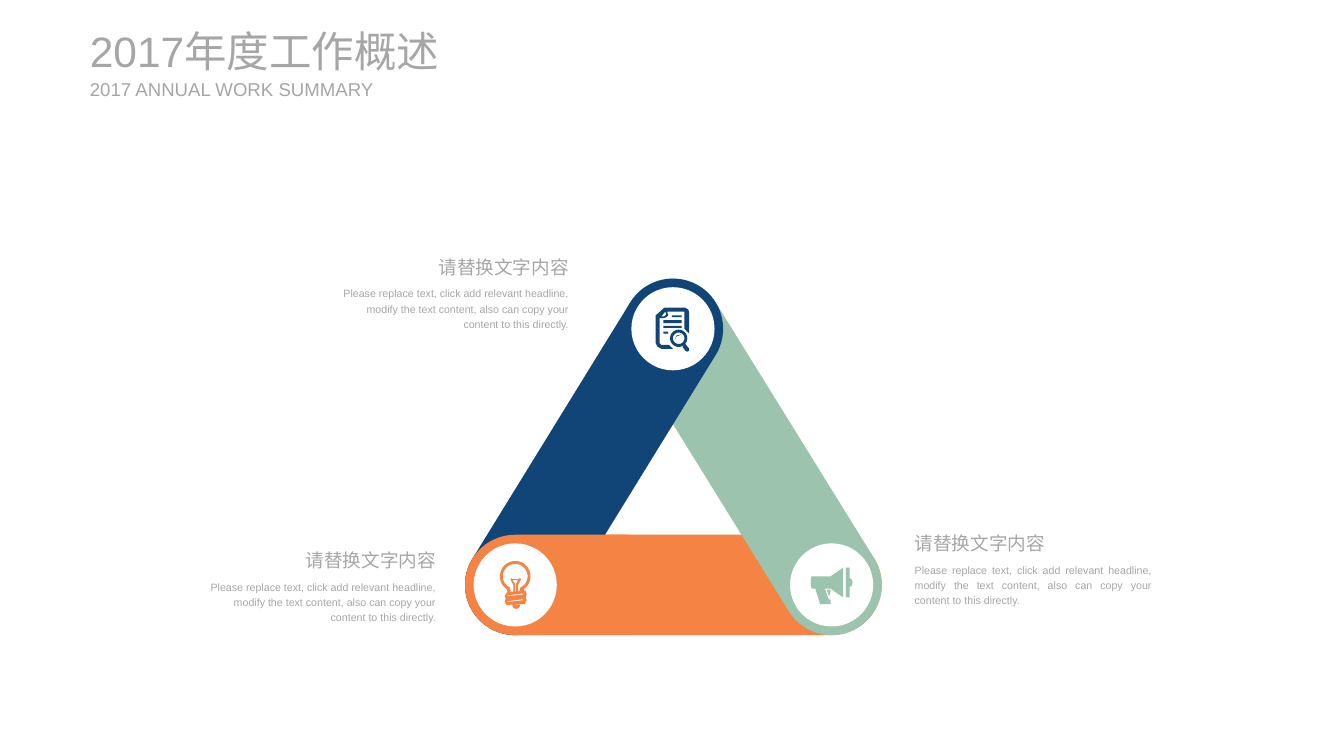
from math import atan2, cos, degrees, dist, radians, sin

from pptx import Presentation
from pptx.dml.color import RGBColor
from pptx.enum import shapes, text
from pptx.util import Inches, Pt

NAVY = RGBColor(0x11, 0x45, 0x77)
ORANGE = RGBColor(0xF5, 0x83, 0x44)
GREEN = RGBColor(0x9C, 0xC3, 0xAE)
WHITE = RGBColor(0xFF, 0xFF, 0xFF)
GREY = RGBColor(0xA6, 0xA6, 0xA6)

LEFT, RIGHT, JUSTIFY = text.PP_ALIGN.LEFT, text.PP_ALIGN.RIGHT, text.PP_ALIGN.JUSTIFY
TITLE = "2017年度工作概述"
SUBTITLE = "2017 ANNUAL WORK SUMMARY"
HEADLINE = "请替换文字内容"
BODY = ("Please replace text, click add relevant headline, modify the text content, "
        "also can copy your content to this directly.")
CAPTIONS = [
    (9.47, 5.47, 2.68, LEFT, JUSTIFY),
    (3.46, 2.58, 2.59, RIGHT, RIGHT),
    (2.07, 5.65, 2.59, RIGHT, RIGHT),
]

BAR_HEIGHT = 1.05
DISC_SIZE = 0.87
HEADLINE_HEIGHT = 0.35
APEX, LEFT_CORNER, RIGHT_CORNER = (7.04, 3.44), (5.39, 6.12), (8.7, 6.12)
OVERLAP_END = (6.57, 6.12)
BARS = [
    (LEFT_CORNER, RIGHT_CORNER, ORANGE),
    (APEX, RIGHT_CORNER, GREEN),
    (LEFT_CORNER, APEX, NAVY),
    (LEFT_CORNER, OVERLAP_END, ORANGE),
]


def arc(x, y, radius, start=0, end=360, steps=40):
    """Return points along a circular arc, with angles running clockwise."""
    angles = [radians(start + (end - start) * i / steps) for i in range(steps + 1)]
    return [(x + radius * cos(a), y + radius * sin(a)) for a in angles]


def box(left, top, right, bottom):
    """Return the corners of a rectangle."""
    return [(left, top), (right, top), (right, bottom), (left, bottom)]


DOCUMENT = [
    [(6.95, 3.22), (7.17, 3.22), (7.2, 3.24), (7.21, 3.27), (7.21, 3.49), (7.16, 3.44),
     (7.16, 3.26), (6.98, 3.26), (6.99, 3.3), (6.97, 3.32), (6.94, 3.33), (6.9, 3.33),
     (6.9, 3.59), (6.92, 3.61), (7, 3.61), (7.04, 3.65), (6.92, 3.65), (6.88, 3.63),
     (6.86, 3.59), (6.86, 3.3)],
    [(6.96, 3.26), (6.92, 3.31), (6.95, 3.31), (6.97, 3.29)],
    box(7.03, 3.3, 7.13, 3.32),
    box(6.94, 3.35, 7.13, 3.38),
    box(6.94, 3.41, 7.13, 3.43),
    box(6.94, 3.47, 6.99, 3.49),
    arc(7.1, 3.54, 0.09),
    arc(7.1, 3.54, 0.06),
    [(7.06, 3.55), (7.08, 3.51), (7.13, 3.5), (7.08, 3.52)],
    [(7.14, 3.63), (7.17, 3.67), (7.19, 3.68), (7.21, 3.67), (7.21, 3.65), (7.17, 3.6)],
]
BULB = [
    arc(5.39, 6.03, 0.16, 124, 416) + [
        (5.48, 6.18), (5.5, 6.18), (5.51, 6.22), (5.5, 6.25), (5.51, 6.28), (5.49, 6.32),
        (5.3, 6.33), (5.28, 6.3), (5.29, 6.26), (5.28, 6.24), (5.3, 6.2), (5.31, 6.2)],
    arc(5.39, 6.03, 0.13, 114, 426) + [
        (5.44, 6.18), (5.42, 6.19), (5.42, 6.12), (5.45, 6.06), (5.44, 6.05), (5.42, 6.06),
        (5.36, 6.06), (5.35, 6.05), (5.34, 6.06), (5.37, 6.12), (5.37, 6.19), (5.34, 6.19)],
    [(5.36, 6.07), (5.39, 6.11), (5.39, 6.19), (5.4, 6.19), (5.4, 6.11), (5.42, 6.07)],
    [(5.31, 6.23), (5.47, 6.21), (5.47, 6.22), (5.31, 6.24)],
    [(5.31, 6.29), (5.47, 6.27), (5.47, 6.28), (5.31, 6.3)],
    arc(5.4, 6.33, 0.04, 0, 180),
]
MEGAPHONE = [
    [(8.49, 6.03), (8.69, 6.03), (8.82, 5.94), (8.82, 6.25), (8.69, 6.16), (8.63, 6.16),
     (8.67, 6.27), (8.69, 6.27), (8.69, 6.32), (8.58, 6.32), (8.53, 6.16), (8.49, 6.16),
     (8.48, 6.09)],
    [(8.85, 5.94), (8.89, 5.94), (8.89, 6.05), (8.91, 6.06), (8.92, 6.09), (8.91, 6.13),
     (8.89, 6.14), (8.89, 6.25), (8.85, 6.25)],
    [(8.65, 6.17), (8.69, 6.17), (8.68, 6.23), (8.67, 6.23)],
]
ICONS = [(APEX, DOCUMENT, NAVY), (LEFT_CORNER, BULB, ORANGE), (RIGHT_CORNER, MEGAPHONE, GREEN)]


def paint(shape, color):
    """Give a shape a flat fill without line or shadow."""
    shape.shadow.inherit = False
    shape.fill.solid()
    shape.fill.fore_color.rgb = color
    shape.line.fill.background()


def add_centred(slide, preset, centre, width, height, color):
    """Add a preset shape around a centre point."""
    left, top = centre[0] - width / 2, centre[1] - height / 2
    shape = slide.shapes.add_shape(preset, Inches(left), Inches(top), Inches(width), Inches(height))
    paint(shape, color)
    return shape


def add_bar(slide, start, end, color):
    """Add a round-ended bar between two corners."""
    centre = ((start[0] + end[0]) / 2, (start[1] + end[1]) / 2)
    bar = add_centred(slide, shapes.MSO_SHAPE.ROUNDED_RECTANGLE, centre,
                      dist(start, end) + BAR_HEIGHT, BAR_HEIGHT, color)
    bar.adjustments[0] = 0.5
    bar.rotation = degrees(atan2(end[1] - start[1], end[0] - start[0]))


def add_icon(slide, contours, color):
    """Add one outline made of several closed contours."""
    outlines = [[(Inches(x), Inches(y)) for x, y in contour] for contour in contours]
    builder = slide.shapes.build_freeform(*outlines[0][0], scale=1.0)
    for number, outline in enumerate(outlines):
        if number:
            builder.move_to(*outline[0])
        builder.add_line_segments(outline[1:], close=True)
    paint(builder.convert_to_shape(), color)


def write(holder, words, place, size, align=LEFT, spacing=1.0, **frame_format):
    """Place a text holder and format its single paragraph."""
    for side, value in zip(("left", "top", "width", "height"), place):
        setattr(holder, side, Inches(value))
    frame = holder.text_frame
    frame.text = words
    paragraph = frame.paragraphs[0]
    formats = [
        (frame, {"word_wrap": True, "auto_size": text.MSO_AUTO_SIZE.NONE, **frame_format}),
        (paragraph, {"alignment": align, "line_spacing": spacing}),
        (paragraph.runs[0].font, {"name": "Arial", "size": Pt(size)}),
    ]
    for target, values in formats:
        for attribute, value in values.items():
            setattr(target, attribute, value)
    paragraph.runs[0].font.color.rgb = GREY


def main():
    """Build the annual work summary slide."""
    deck = Presentation()
    deck.slide_width, deck.slide_height = Inches(14.06), Inches(7.91)
    slide = deck.slides.add_slide(deck.slide_layouts[5])

    for start, end, color in BARS:
        add_bar(slide, start, end, color)
    for corner, contours, color in ICONS:
        add_centred(slide, shapes.MSO_SHAPE.OVAL, corner, DISC_SIZE, DISC_SIZE, WHITE)
        add_icon(slide, contours, color)

    def new_box():
        return slide.shapes.add_textbox(0, 0, 0, 0)

    for left, top, width, headline_align, body_align in CAPTIONS:
        write(new_box(), HEADLINE, (left, top, width, 0.36), 14, headline_align, 1.2)
        write(new_box(), BODY, (left, top + HEADLINE_HEIGHT, width, 0.57), 8, body_align, 1.2)

    heading = {"vertical_anchor": text.MSO_ANCHOR.MIDDLE, "margin_left": 0,
               "margin_top": 0, "margin_right": 0, "margin_bottom": 0}
    write(slide.shapes.title, TITLE, (0.94, 0.26, 4.32, 0.54), 32, **heading)
    write(new_box(), SUBTITLE, (0.94, 0.81, 3.07, 0.24), 14, **heading)
    deck.save("out.pptx")


if __name__ == "__main__":
    main()
